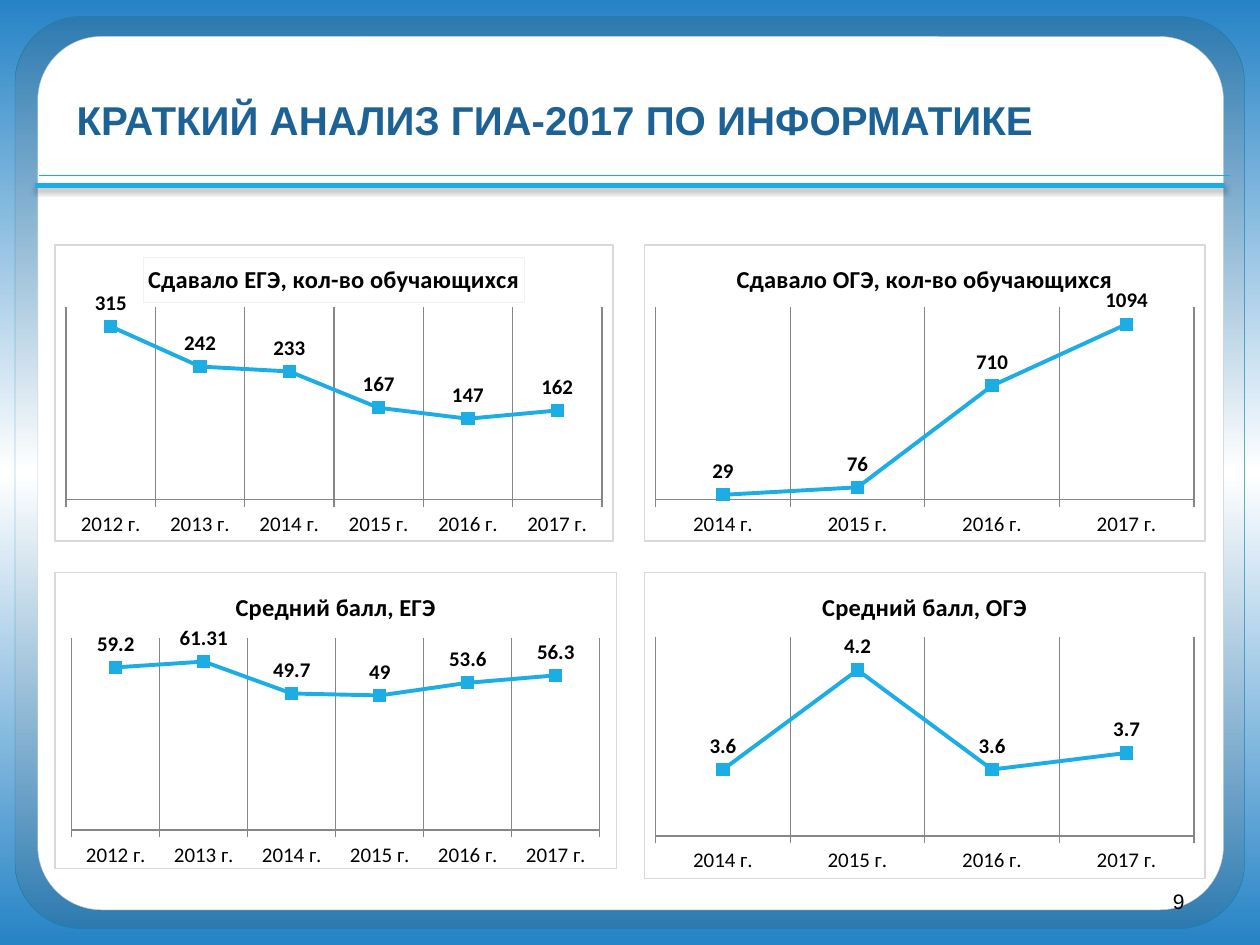
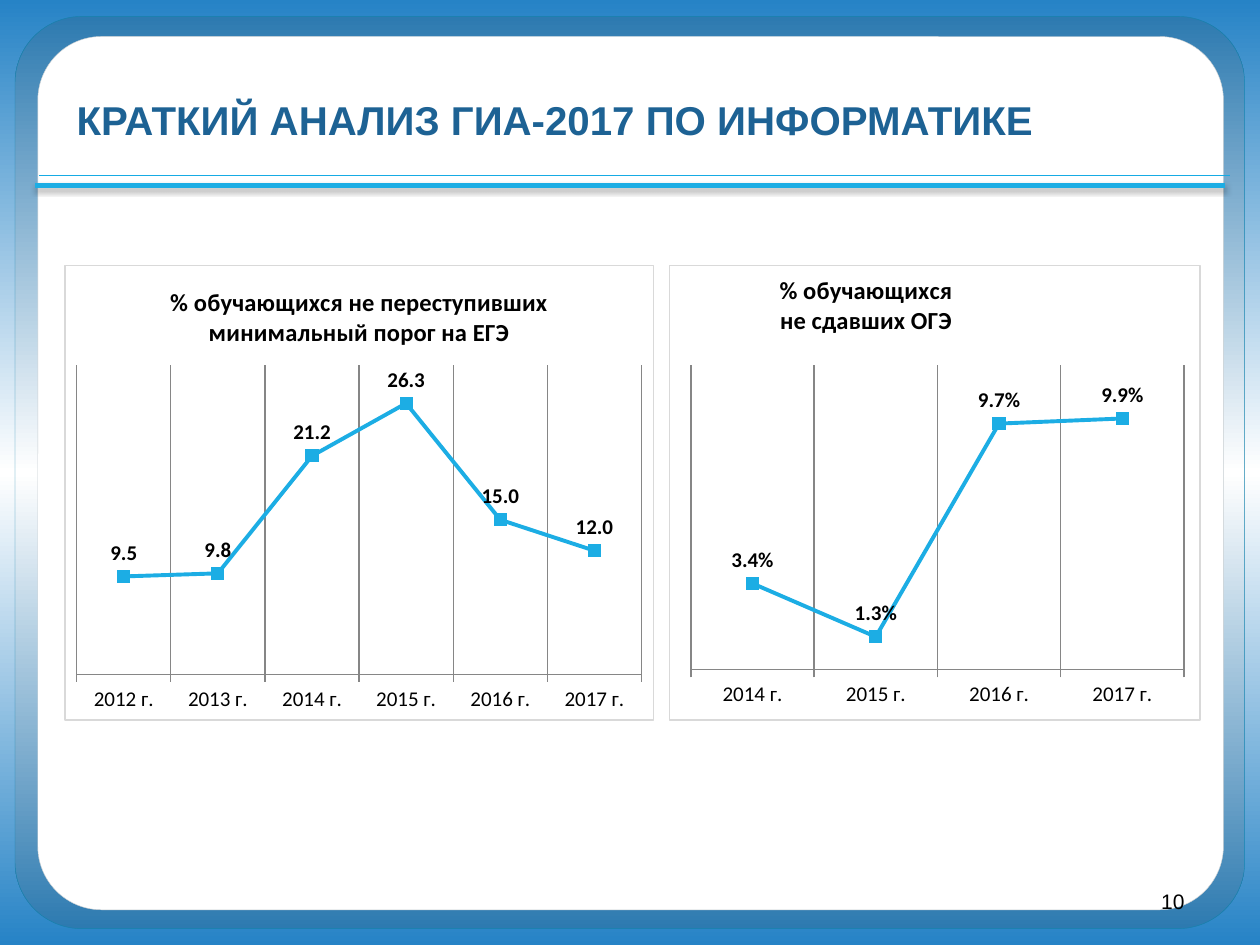
from dataclasses import dataclass

from lxml import etree
from pptx import Presentation
from pptx.chart.data import CategoryChartData
from pptx.dml.color import RGBColor
from pptx.enum.chart import (XL_CHART_TYPE, XL_LABEL_POSITION, XL_MARKER_STYLE,
                             XL_TICK_LABEL_POSITION, XL_TICK_MARK)
from pptx.enum.shapes import MSO_CONNECTOR, MSO_SHAPE
from pptx.enum.text import MSO_ANCHOR, PP_ALIGN
from pptx.oxml.ns import qn
from pptx.util import Pt

LINE_MARKERS = XL_CHART_TYPE.LINE_MARKERS
ABOVE = XL_LABEL_POSITION.ABOVE
SQUARE = XL_MARKER_STYLE.SQUARE
LABELS_LOW = XL_TICK_LABEL_POSITION.LOW
TICK_OUT, TICK_NONE = XL_TICK_MARK.OUTSIDE, XL_TICK_MARK.NONE
STRAIGHT = MSO_CONNECTOR.STRAIGHT
ROUNDED = MSO_SHAPE.ROUNDED_RECTANGLE
TOP, MIDDLE = MSO_ANCHOR.TOP, MSO_ANCHOR.MIDDLE
LEFT, RIGHT = PP_ALIGN.LEFT, PP_ALIGN.RIGHT


@dataclass(frozen=True)
class Theme:
    backdrop: tuple = ("2683C6", "FFFFFF", "2683C6")
    frame: tuple = ("2D7AB0", "FFFFFF", "2D7AB0")
    frame_line: str = "1482AC"
    panel_line: str = "C6CDD1"
    white: str = "FFFFFF"
    black: str = "000000"
    heading: str = "1D6294"
    accent: str = "1CADE4"
    thin_rule: str = "16ABE4"
    grid: str = "868686"
    chart_border: str = "D9D9D9"
    title_border: str = "F2F2F2"
    text_font: str = "Arial"
    chart_font: str = "Calibri"
    heading_size: float = 23
    chart_title_size: float = 14
    label_size: float = 12
    chart_size: float = 10


def rgb(value):
    return RGBColor.from_string(value)


def apply(target, **values):
    for name, value in values.items():
        setattr(target, name, value)


def set_font(font, color, **values):
    apply(font, **values)
    font.color.rgb = rgb(color)


def set_line(line, color, width):
    line.color.rgb = rgb(color)
    line.width = Pt(width)


def element(parent, tag, **attributes):
    return etree.SubElement(parent, qn(tag), {k: str(v) for k, v in attributes.items()})


def set_gradient(owner, fill, colors):
    """Vertical gradient with evenly spaced stops."""
    fill.gradient()
    fill.gradient_angle = 90
    stops = next(owner.element.iter(qn("a:gsLst")))
    for stop in list(stops):
        stops.remove(stop)
    for index, color in enumerate(colors):
        stop = element(stops, "a:gs", pos=100000 * index // (len(colors) - 1))
        element(stop, "a:srgbClr", val=color)


def set_layout(parent, index, **values):
    """Manual chart layout, in fractions of the chart."""
    for old in parent.findall(qn("c:layout")):
        parent.remove(old)
    layout = etree.Element(qn("c:layout"))
    manual = element(layout, "c:manualLayout")
    for name, value in values.items():
        element(manual, f"c:{name}", val=value)
    parent.insert(index, layout)


class Deck:
    def __init__(self, theme):
        self.theme = theme
        self.deck = Presentation()
        apply(self.deck, slide_width=Pt(720), slide_height=Pt(540))
        self.page = None

    def add_page(self, heading, number):
        theme = self.theme
        self.page = self.deck.slides.add_slide(self.deck.slide_layouts[6])
        set_gradient(self.page, self.page.background.fill, theme.backdrop)
        # Frame and white panel
        frame = self.panel((8.6, 9.4, 702.7, 521.3), theme.frame_line)
        set_gradient(frame, frame.fill, theme.frame)
        panel = self.panel((21.6, 20.9, 677.5, 499), theme.panel_line)
        panel.fill.solid()
        panel.fill.fore_color.rgb = rgb(theme.white)
        # Heading with its two rules
        self.text((36.7, 45.4, 661.7, 37.4), heading, theme.heading,
                  theme.heading_size, bold=True, spacing=1.2)
        self.rule(20.2, 699.8, 105.8, theme.accent, 3, shadow=True)
        self.rule(22.3, 702.7, 100.1, theme.thin_rule, 0.75)
        # Page number
        self.text((516.2, 500.4, 167.8, 28.8), str(number), theme.black,
                  theme.label_size, align=RIGHT, anchor=MIDDLE)

    def panel(self, area, line_color):
        shape = self.page.shapes.add_shape(ROUNDED, *map(Pt, area))
        shape.adjustments[0] = 0.073
        shape.shadow.inherit = False
        set_line(shape.line, line_color, 0.25)
        return shape

    def text(self, area, words, color, size, bold=False, align=LEFT,
             anchor=TOP, spacing=1.0):
        box = self.page.shapes.add_textbox(*map(Pt, area))
        apply(box.text_frame, word_wrap=True, vertical_anchor=anchor)
        para = box.text_frame.paragraphs[0]
        apply(para, alignment=align, line_spacing=spacing)
        span = para.add_run()
        span.text = words
        set_font(span.font, color, size=Pt(size), bold=bold, name=self.theme.text_font)

    def rule(self, left, right, top, color, width, shadow=False):
        line = self.page.shapes.add_connector(STRAIGHT, *map(Pt, (left, top, right, top)))
        set_line(line.line, color, width)
        effects = element(line.element.spPr, "a:effectLst")
        if shadow:
            cast = element(effects, "a:outerShdw", blurRad=Pt(3.1), dist=Pt(1.8),
                           dir=5400000, rotWithShape=0)
            shade = element(cast, "a:srgbClr", val=self.theme.black)
            element(shade, "a:alpha", val=35000)

    def chart(self, area, title, first_year, values, scale, number_format="General",
              plot_area=(0.02, 0.21, 0.96, 0.65), title_at=None, boxed_title=False):
        theme = self.theme
        data = CategoryChartData(number_format=number_format)
        data.categories = [f"{first_year + i} г." for i in range(len(values))]
        data.add_series("Series 1", values)
        chart = self.page.shapes.add_chart(LINE_MARKERS, *map(Pt, area), data).chart
        chart.has_legend = False
        text = dict(color=theme.black, name=theme.chart_font)
        set_font(chart.font, size=Pt(theme.chart_size), **text)
        self.chart_title(chart, title, title_at, boxed_title, text)

        # Axes
        years, amounts = chart.category_axis, chart.value_axis
        apply(years, has_major_gridlines=True, major_tick_mark=TICK_OUT,
              minor_tick_mark=TICK_NONE, tick_label_position=LABELS_LOW)
        set_font(years.tick_labels.font, size=Pt(theme.label_size), **text)
        for line in (years.format.line, years.major_gridlines.format.line):
            set_line(line, theme.grid, 0.75)
        apply(amounts, visible=False, has_major_gridlines=False,
              minimum_scale=scale[0], maximum_scale=scale[1])

        # Series and labels
        plot = chart.plots[0]
        apply(plot, vary_by_categories=False, has_data_labels=True)
        series = plot.series[0]
        series.smooth = False
        set_line(series.format.line, theme.accent, 2.25)
        apply(series.marker, style=SQUARE, size=7)
        series.marker.format.fill.solid()
        series.marker.format.fill.fore_color.rgb = rgb(theme.accent)
        set_line(series.marker.format.line, theme.accent, 0.75)
        labels = plot.data_labels
        apply(labels, show_value=True, position=ABOVE,
              number_format=number_format, number_format_is_linked=False)
        set_font(labels.font, size=Pt(theme.label_size), bold=True, **text)

        # Plot position and chart border
        space = chart.element
        left, top, width, height = plot_area
        set_layout(next(space.iter(qn("c:plotArea"))), 0, layoutTarget="inner",
                   xMode="edge", yMode="edge", x=left, y=top, w=width, h=height)
        border = etree.Element(qn("c:spPr"))
        element(element(border, "a:solidFill"), "a:srgbClr", val=theme.white)
        line = element(border, "a:ln", w=Pt(0.75))
        element(element(line, "a:solidFill"), "a:srgbClr", val=theme.chart_border)
        space.find(qn("c:chart")).addnext(border)

    def chart_title(self, chart, words, title_at, boxed, text):
        chart.has_title = True
        title = chart.chart_title
        title.text_frame.text = words
        for para in title.text_frame.paragraphs:
            for span in para.runs:
                set_font(span.font, size=Pt(self.theme.chart_title_size), bold=True, **text)
        if title_at:
            set_layout(next(chart.element.iter(qn("c:title"))), 1,
                       xMode="edge", yMode="edge", x=title_at[0], y=title_at[1])
        if boxed:
            title.format.fill.solid()
            title.format.fill.fore_color.rgb = rgb(self.theme.white)
            set_line(title.format.line, self.theme.title_border, 0.75)


def main():
    deck = Deck(Theme())
    heading = "КРАТКИЙ АНАЛИЗ ГИА-2017 ПО ИНФОРМАТИКЕ"

    # Participants and average marks
    deck.add_page(heading, 9)
    left, right, upper, lower = 31, 367.9, 139.7, 326.9
    deck.chart((left, upper, 319.7, 169.9), "Сдавало ЕГЭ, кол-во обучающихся",
               2012, (315, 242, 233, 167, 147, 162), (0, 350), boxed_title=True)
    deck.chart((left, lower, 321.8, 169.9), "Средний балл, ЕГЭ",
               2012, (59.2, 61.31, 49.7, 49, 53.6, 56.3), (0, 70),
               plot_area=(0.03, 0.22, 0.94, 0.65))
    deck.chart((right, upper, 321.1, 169.9), "Сдавало ОГЭ, кол-во обучающихся",
               2014, (29, 76, 710, 1094), (0, 1200))
    deck.chart((right, lower, 321.1, 175.7), "Средний балл, ОГЭ",
               2014, (3.6, 4.2, 3.6, 3.7), (3.2, 4.4), "0.0")

    # Share of pupils who failed
    deck.add_page(heading, 10)
    top, height = 151.2, 260.6
    deck.chart((36.7, top, 337, height),
               "% обучающихся не переступивших минимальный порог на ЕГЭ",
               2012, (9.5, 9.8, 21.2, 26.3, 15, 12), (0, 30), "0.0",
               plot_area=(0.02, 0.22, 0.96, 0.68))
    deck.chart((382.3, top, 303.8, height), "% обучающихся\nне сдавших ОГЭ",
               2014, (0.034, 0.013, 0.097, 0.099), (0, 0.12), "0.0%",
               plot_area=(0.04, 0.22, 0.93, 0.67), title_at=(0.2, 0.01))

    deck.deck.save("out.pptx")


if __name__ == "__main__":
    main()
